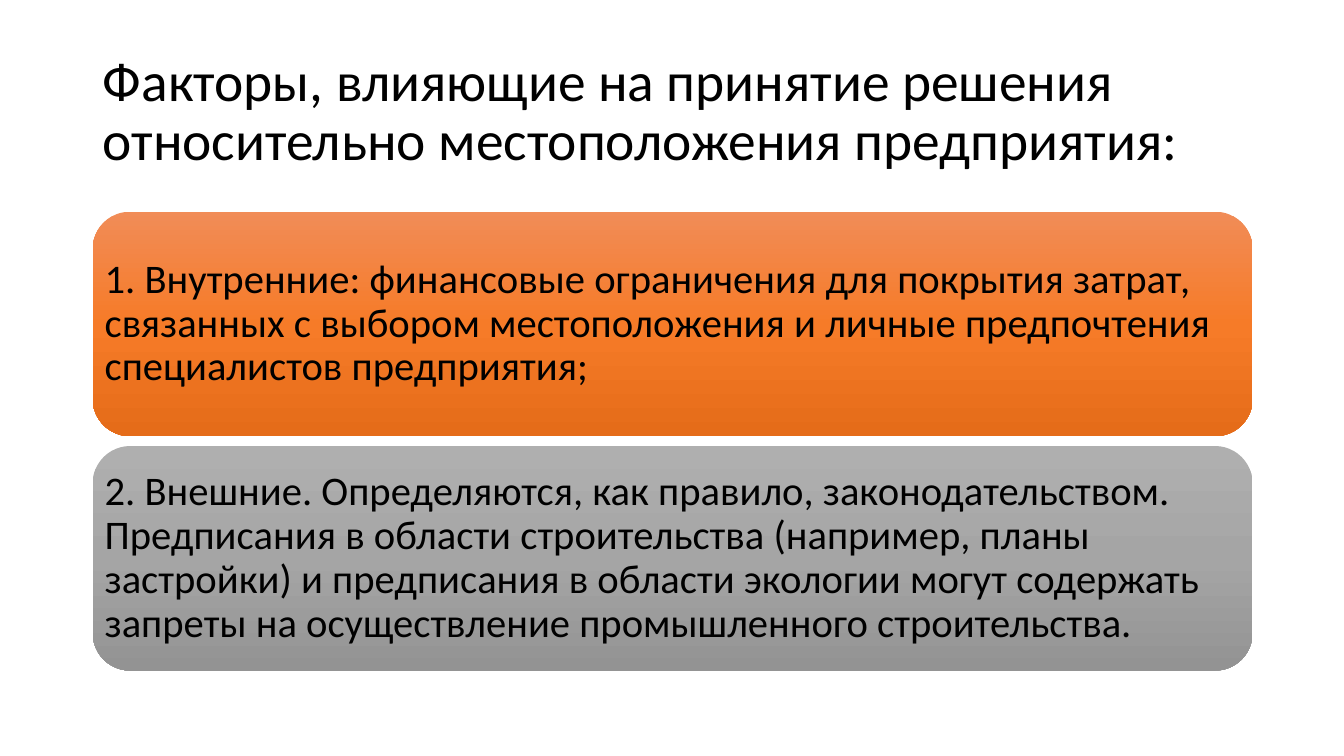
"""Build a slide with two groups of factors that affect where an enterprise is located."""
from copy import deepcopy
from dataclasses import dataclass

from pptx import Presentation
from pptx import util as u
from pptx.dml.color import RGBColor
from pptx.enum import shapes, text
from pptx.oxml.ns import qn

WIDTH, HEIGHT = u.Inches(13.33), u.Inches(7.5)
LEFT, SPAN = 0.069, 0.863
TITLE_TOP, TITLE_HEIGHT = 0.053, 0.193
CARDS_TOP, CARD_HEIGHT, CARD_PITCH = 0.28, 0.297, 0.31
CARD_INSET = u.Inches(0.01)
FONT = "Calibri"
COLORS = {
    "text": "000000",
    "orange_light": "F18C57",
    "orange": "F67B28",
    "orange_dark": "E56C19",
    "gray_light": "AFAFAF",
    "gray": "A5A5A5",
    "gray_dark": "939393",
}


@dataclass(frozen=True)
class Factor:
    text: str
    hue: str


TITLE = "Факторы, влияющие на принятие решения относительно местоположения предприятия:"
FACTORS = [
    Factor(
        "1. Внутренние: финансовые ограничения для покрытия затрат, связанных с выбором "
        "местоположения и личные предпочтения специалистов предприятия;",
        "orange",
    ),
    Factor(
        "2. Внешние. Определяются, как правило, законодательством. Предписания в области "
        "строительства (например, планы застройки) и предписания в области экологии могут "
        "содержать запреты на осуществление промышленного строительства.",
        "gray",
    ),
]


def box(top: float, height: float) -> tuple[int, int, int, int]:
    """Return a full-width box from shares of the slide's height."""
    return int(LEFT * WIDTH), int(top * HEIGHT), int(SPAN * WIDTH), int(height * HEIGHT)


def write(tf, content: str, size: float) -> None:
    """Write one left-aligned, vertically centred paragraph."""
    tf.text = content
    tf.word_wrap = True
    tf.auto_size = text.MSO_AUTO_SIZE.NONE
    tf.vertical_anchor = text.MSO_ANCHOR.MIDDLE
    p = tf.paragraphs[0]
    p.alignment = text.PP_ALIGN.LEFT
    p.line_spacing = 0.9
    p.font.name = FONT
    p.font.size = u.Pt(size)
    p.font.color.rgb = RGBColor.from_string(COLORS["text"])


def shade(sp, hue: str) -> None:
    """Fill a shape with a three-stop gradient from top to bottom."""
    sp.fill.gradient()
    sp.fill.gradient_angle = 270
    stops = sp._element.spPr.find(qn("a:gradFill")).find(qn("a:gsLst"))
    stops.append(deepcopy(stops[-1]))
    names = (f"{hue}_light", hue, f"{hue}_dark")
    for stop, position, name in zip(sp.fill.gradient_stops, (0, 0.5, 1), names):
        stop.position = position
        stop.color.rgb = RGBColor.from_string(COLORS[name])


def add_card(s, factor: Factor, row: int) -> None:
    """Draw one factor as a rounded card."""
    area = box(CARDS_TOP + row * CARD_PITCH, CARD_HEIGHT)
    sp = s.shapes.add_shape(shapes.MSO_SHAPE.ROUNDED_RECTANGLE, *area)
    sp.shadow.inherit = False
    sp.line.fill.background()
    shade(sp, factor.hue)
    tf = sp.text_frame
    tf.margin_left = tf.margin_right = tf.margin_top = tf.margin_bottom = CARD_INSET
    write(tf, factor.text, 29)


def main() -> None:
    """Assemble and save the slide."""
    prs = Presentation()
    prs.slide_width, prs.slide_height = WIDTH, HEIGHT
    s = prs.slides.add_slide(prs.slide_layouts.get_by_name("Title Only"))
    title = s.shapes.title
    title.left, title.top, title.width, title.height = box(TITLE_TOP, TITLE_HEIGHT)
    write(title.text_frame, TITLE, 39.6)
    for row, factor in enumerate(FACTORS):
        add_card(s, factor, row)
    prs.save("out.pptx")


if __name__ == "__main__":
    main()
